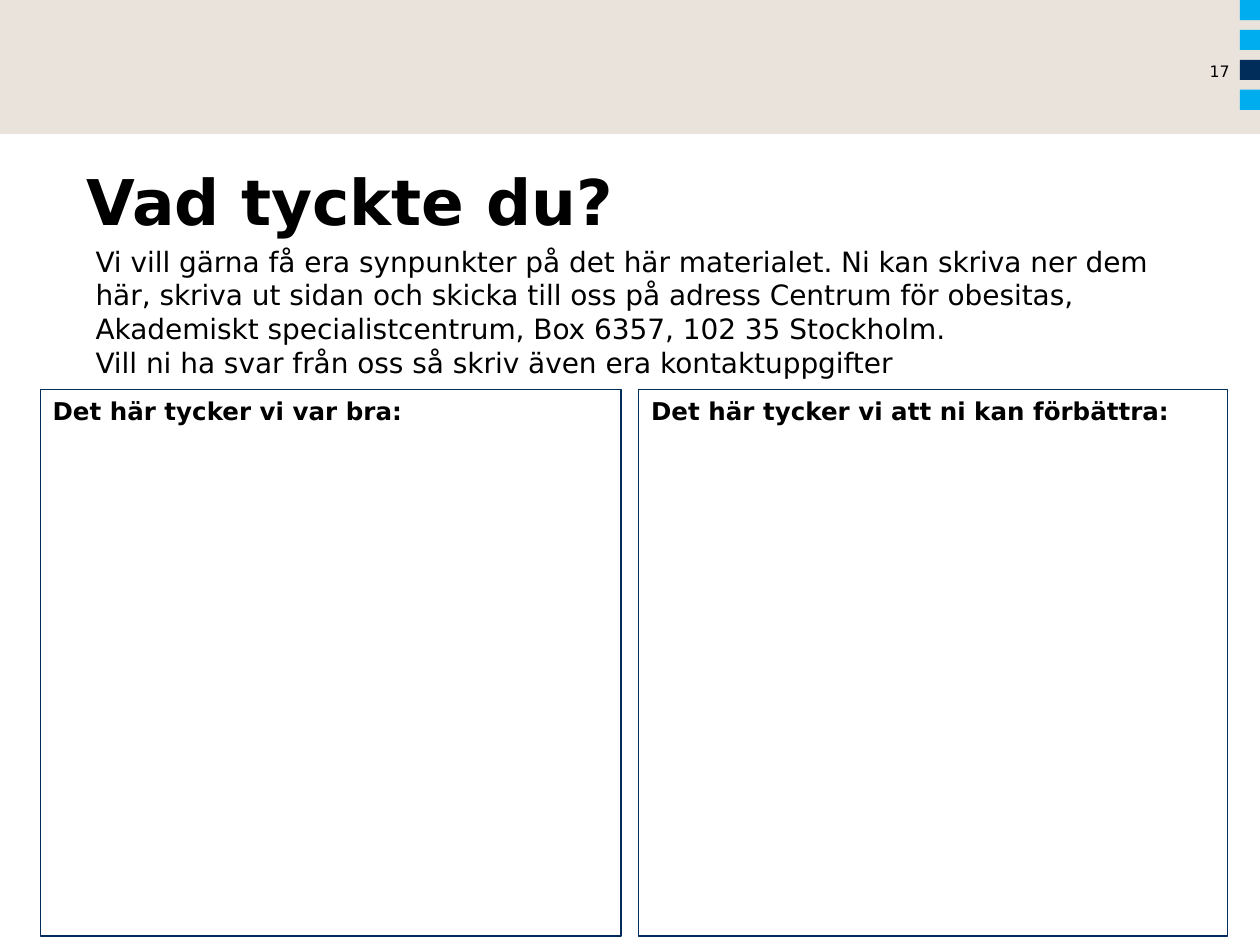
"""Build the feedback slide with two empty answer boxes."""
from pptx import Presentation
from pptx.dml.color import RGBColor
from pptx.enum.shapes import MSO_SHAPE as Shape
from pptx.enum.text import MSO_ANCHOR as Anchor, PP_ALIGN as Align
from pptx.util import Pt

NAVY = "002D5A"
CYAN = "00AEEF"
SAND = "E9E3DC"
BLACK = "000000"


def rgb(value):
    return RGBColor.from_string(value)


def write(box, lines, size, bold=False, align=Align.LEFT):
    frame = box.text_frame
    frame.word_wrap = True
    frame.vertical_anchor = Anchor.TOP
    paragraph = frame.paragraphs[0]
    paragraph.alignment = align
    for index, line in enumerate(lines):
        if index:
            paragraph.add_line_break()
        run = paragraph.add_run()
        run.text = line
        run.font.name = "DejaVu Sans"
        run.font.size = Pt(size)
        run.font.bold = bold
        run.font.color.rgb = rgb(BLACK)
    return frame


prs = Presentation()
prs.slide_width, prs.slide_height = Pt(720), Pt(540)
slide = prs.slides.add_slide(prs.slide_layouts[6])
shapes = slide.shapes

blocks = [(0, 0, 720, 76.5, SAND)]
for row, color in enumerate([CYAN, CYAN, NAVY, CYAN]):
    blocks.append((708.5, row * 17.1, 11.5, 11.5, color))
for left, top, width, height, color in blocks:
    block = shapes.add_shape(Shape.RECTANGLE, Pt(left), Pt(top), Pt(width), Pt(height))
    block.shadow.inherit = False
    block.fill.solid()
    block.fill.fore_color.rgb = rgb(color)
    block.line.fill.background()

page_number = shapes.add_textbox(Pt(504), Pt(35.3), Pt(198.7), Pt(10))
number_frame = write(page_number, ["17"], 9, align=Align.RIGHT)
number_frame.margin_left = number_frame.margin_right = 0
number_frame.margin_top = number_frame.margin_bottom = 0

title = shapes.add_textbox(Pt(42.5), Pt(86.4), Pt(606), Pt(65.5))
write(title, ["Vad tyckte du?"], 36, bold=True).margin_top = Pt(6.5)

invitation = shapes.add_textbox(Pt(47.5), Pt(136.1), Pt(633), Pt(75))
write(invitation, [
    "Vi vill gärna få era synpunkter på det här materialet. Ni kan skriva ner dem här, "
    "skriva ut sidan och skicka till oss på adress Centrum för obesitas, "
    "Akademiskt specialistcentrum, Box 6357, 102 35 Stockholm.",
    "Vill ni ha svar från oss så skriv även era kontaktuppgifter",
], 16)

answers = [
    (23, 332, "Det här tycker vi var bra:"),
    (365, 336.5, "Det här tycker vi att ni kan förbättra:"),
]
for left, width, heading in answers:
    answer = shapes.add_shape(Shape.RECTANGLE, Pt(left), Pt(222.5), Pt(width), Pt(312.5))
    answer.shadow.inherit = False
    answer.fill.background()
    answer.line.color.rgb = rgb(NAVY)
    answer.line.width = Pt(0.75)
    write(answer, [heading], 14, bold=True)

prs.save("out.pptx")
